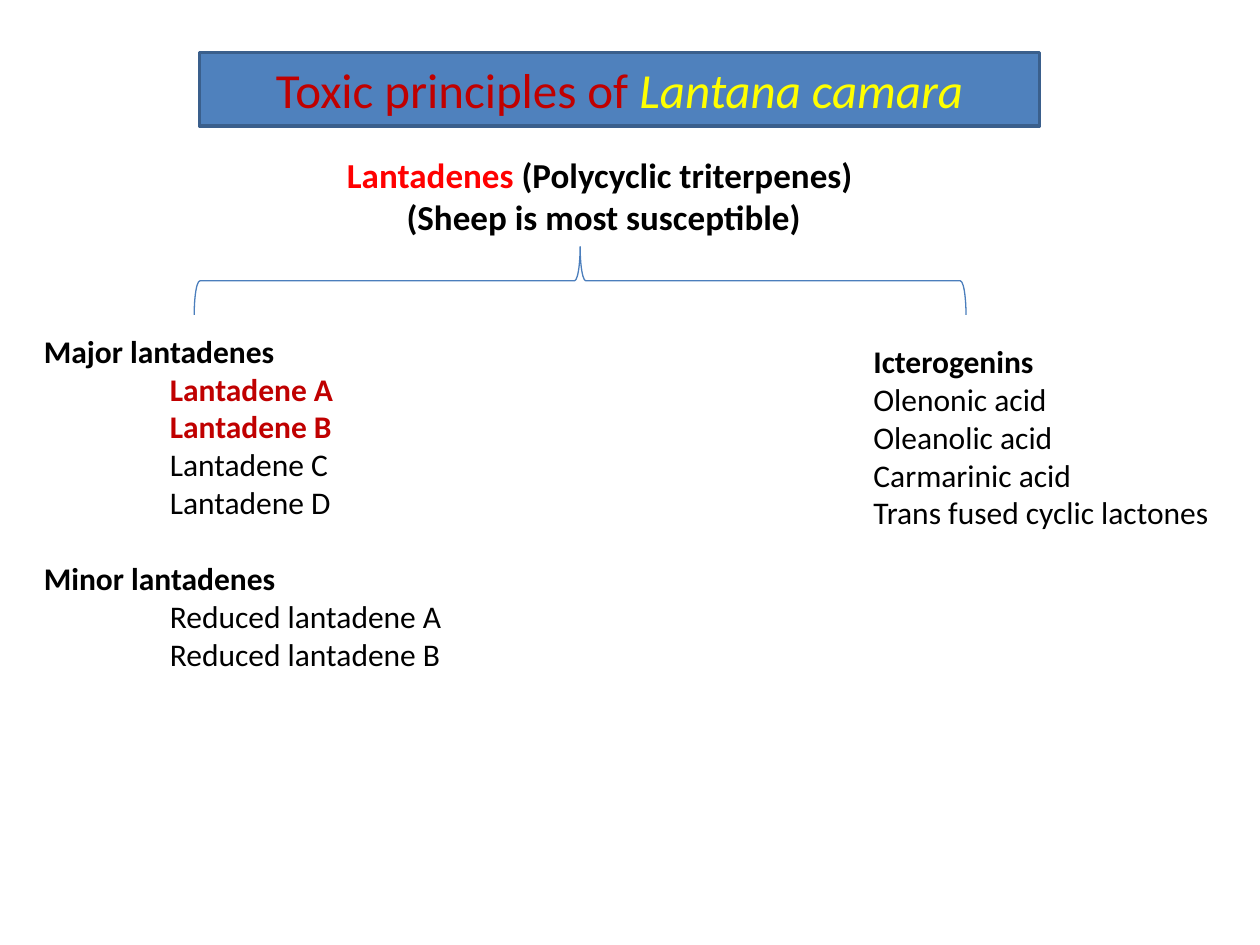
from dataclasses import dataclass

from lxml.etree import SubElement
from pptx import Presentation
from pptx.dml.color import RGBColor
from pptx.enum.shapes import MSO_SHAPE
from pptx.enum.text import MSO_ANCHOR, MSO_AUTO_SIZE, PP_ALIGN
from pptx.oxml.ns import qn
from pptx.util import Inches, Pt

COLS, ROWS = 120, 90
WIDTH, HEIGHT = Inches(10), Inches(7.5)


@dataclass(frozen=True)
class Theme:
    font: str = "Calibri"
    ink: str = "000000"
    dark: str = "C00000"
    red: str = "FF0000"
    yellow: str = "FFFF00"
    fill: str = "4F81BD"
    edge: str = "3A5F8C"
    brace: str = "4B7EBC"
    title: int = 28
    lead: int = 20
    body: int = 18
    gap: int = 22


THEME = Theme()


def grid(col, row, wide, high):
    """Turn grid columns and rows into left, top, width and height."""
    x, y = WIDTH / COLS, HEIGHT / ROWS
    return [round(n) for n in (col * x, row * y, wide * x, high * y)]


def style(run, size, color, bold=False, italic=False):
    font = run.font
    font.name, font.size = THEME.font, Pt(size)
    font.bold, font.italic = bold, italic
    font.color.rgb = RGBColor.from_string(color)


def add_run(para, text, *look):
    run = para.add_run()
    run.text = text
    style(run, *look)


def add_box(slide, box):
    frame = slide.shapes.add_textbox(*box).text_frame
    frame.word_wrap = True
    frame.auto_size = MSO_AUTO_SIZE.SHAPE_TO_FIT_TEXT
    return frame


def add_title(slide, box):
    title = slide.shapes.title
    title.left, title.top, title.width, title.height = box
    geom = SubElement(title._element.spPr, qn("a:prstGeom"), prst="snip2DiagRect")
    SubElement(geom, qn("a:avLst"))
    title.fill.solid()
    title.fill.fore_color.rgb = RGBColor.from_string(THEME.fill)
    title.line.color.rgb = RGBColor.from_string(THEME.edge)
    title.line.width = Pt(2)
    frame = title.text_frame
    frame.auto_size = MSO_AUTO_SIZE.NONE
    frame.vertical_anchor = MSO_ANCHOR.MIDDLE
    para = frame.paragraphs[0]
    para.alignment = PP_ALIGN.CENTER
    add_run(para, "Toxic principles of ", THEME.title, THEME.dark)
    add_run(para, "Lantana camara", THEME.title, THEME.yellow, False, True)


def add_lead(slide, box):
    frame = add_box(slide, box)
    first, second = frame.paragraphs[0], frame.add_paragraph()
    first.alignment = second.alignment = PP_ALIGN.CENTER
    add_run(first, "Lantadenes", THEME.lead, THEME.red, True)
    add_run(first, " (Polycyclic triterpenes) ", THEME.lead, THEME.ink, True)
    add_run(second, "(Sheep is most susceptible)", THEME.lead, THEME.ink, True)


def add_brace(slide, box):
    """Fill the box with a left brace turned to point up."""
    left, top, wide, high = box
    shift = (wide - high) // 2
    brace = slide.shapes.add_shape(
        MSO_SHAPE.LEFT_BRACE, left + shift, top - shift, high, wide)
    brace.rotation = 90
    brace.shadow.inherit = False
    brace.fill.background()
    brace.line.color.rgb = RGBColor.from_string(THEME.brace)
    brace.line.width = Pt(0.75)


def add_list(slide, box, groups, inset=0, strong=()):
    """List each head with its items; heads are inset by some inches."""
    frame = add_box(slide, box)
    para = frame.paragraphs[0]
    for place, (head, items) in enumerate(groups.items()):
        if place:
            para = frame.add_paragraph()
            para.space_before = Pt(THEME.gap)
        indent(para, inset)
        add_run(para, head, THEME.body, THEME.ink, True)
        for item in items:
            para = frame.add_paragraph()
            indent(para, 1)
            bold = item in strong
            color = THEME.dark if bold else THEME.ink
            add_run(para, item, THEME.body, color, bold)


def indent(para, inches):
    props = para._p.get_or_add_pPr()
    props.set("marL", str(Inches(inches)))
    props.set("indent", "0")


def main():
    deck = Presentation()
    deck.slide_width, deck.slide_height = WIDTH, HEIGHT
    slide = deck.slides.add_slide(deck.slide_layouts[5])
    add_title(slide, grid(19, 5, 80, 7))
    add_lead(slide, grid(27, 14, 61, 9.25))
    add_brace(slide, grid(18.5, 23.5, 73.5, 6.5))
    add_list(slide, grid(3, 31, 42, 34), {
        "Major lantadenes": [f"Lantadene {mark}" for mark in "ABCD"],
        "Minor lantadenes": [f"Reduced lantadene {mark}" for mark in "AB"],
    }, strong=("Lantadene A", "Lantadene B"))
    add_list(slide, grid(70, 32, 50, 19.5), {
        "Icterogenins": ["Olenonic acid", "Oleanolic acid", "Carmarinic acid",
                         "Trans fused cyclic lactones"],
    }, inset=1)
    deck.save("out.pptx")


if __name__ == "__main__":
    main()
